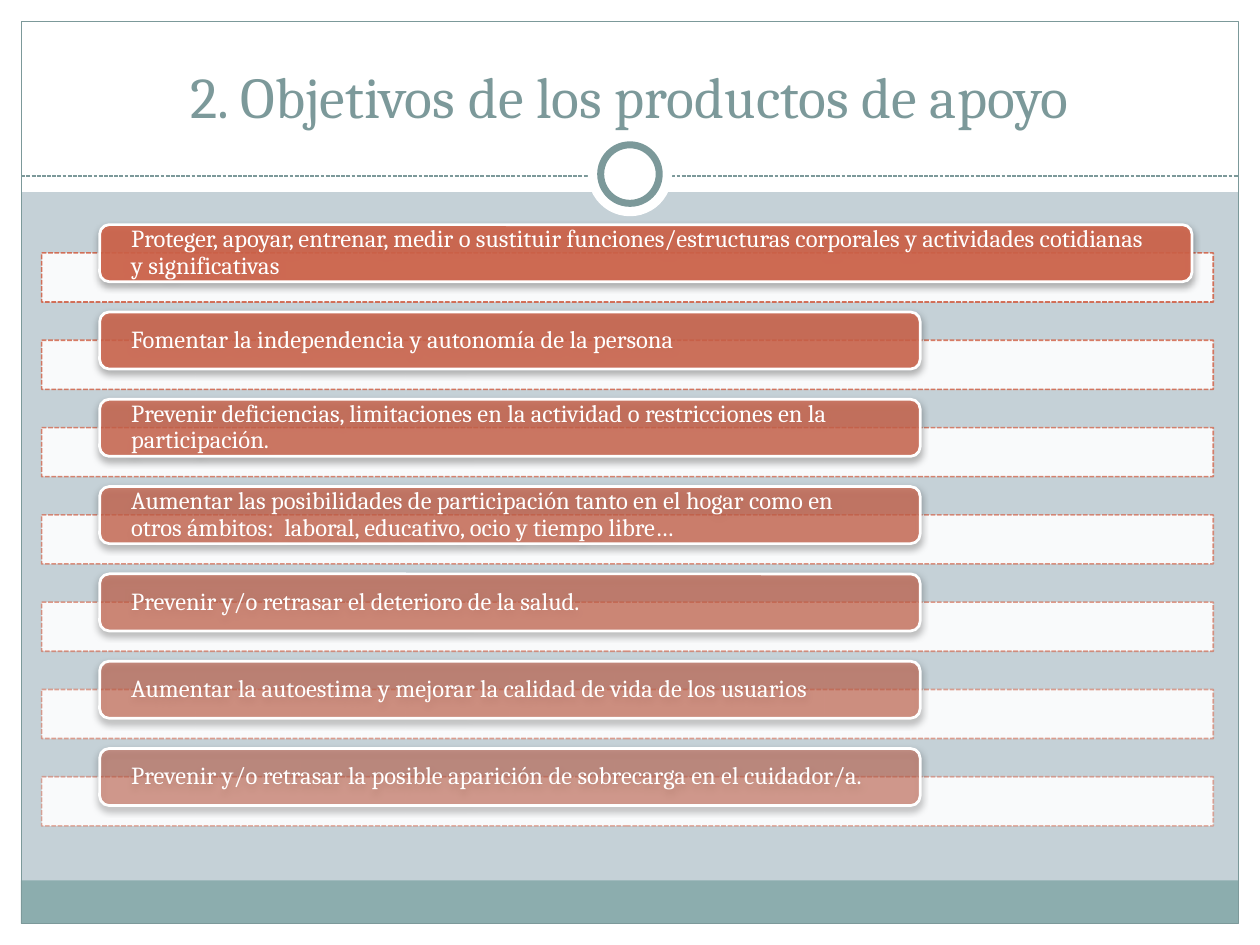
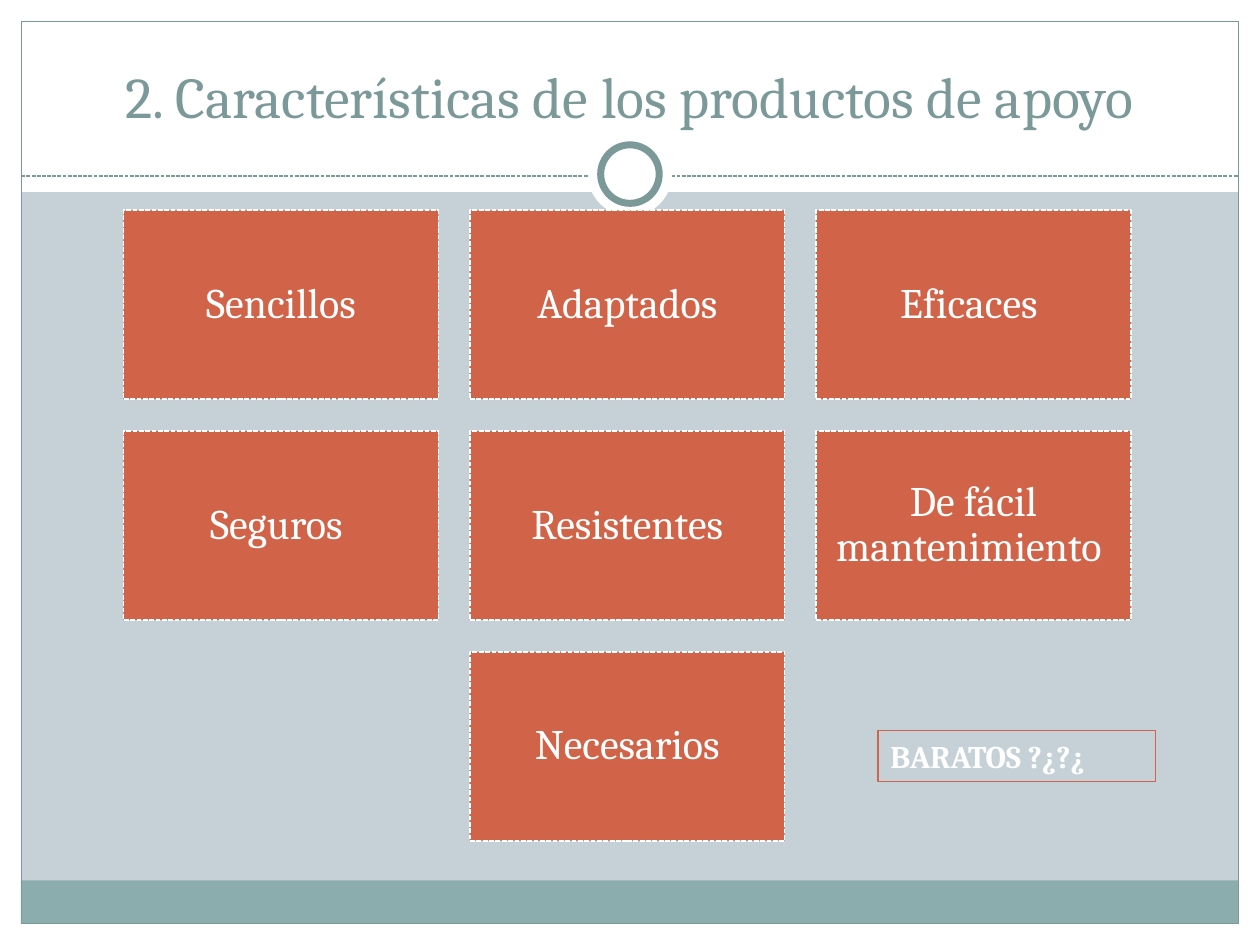
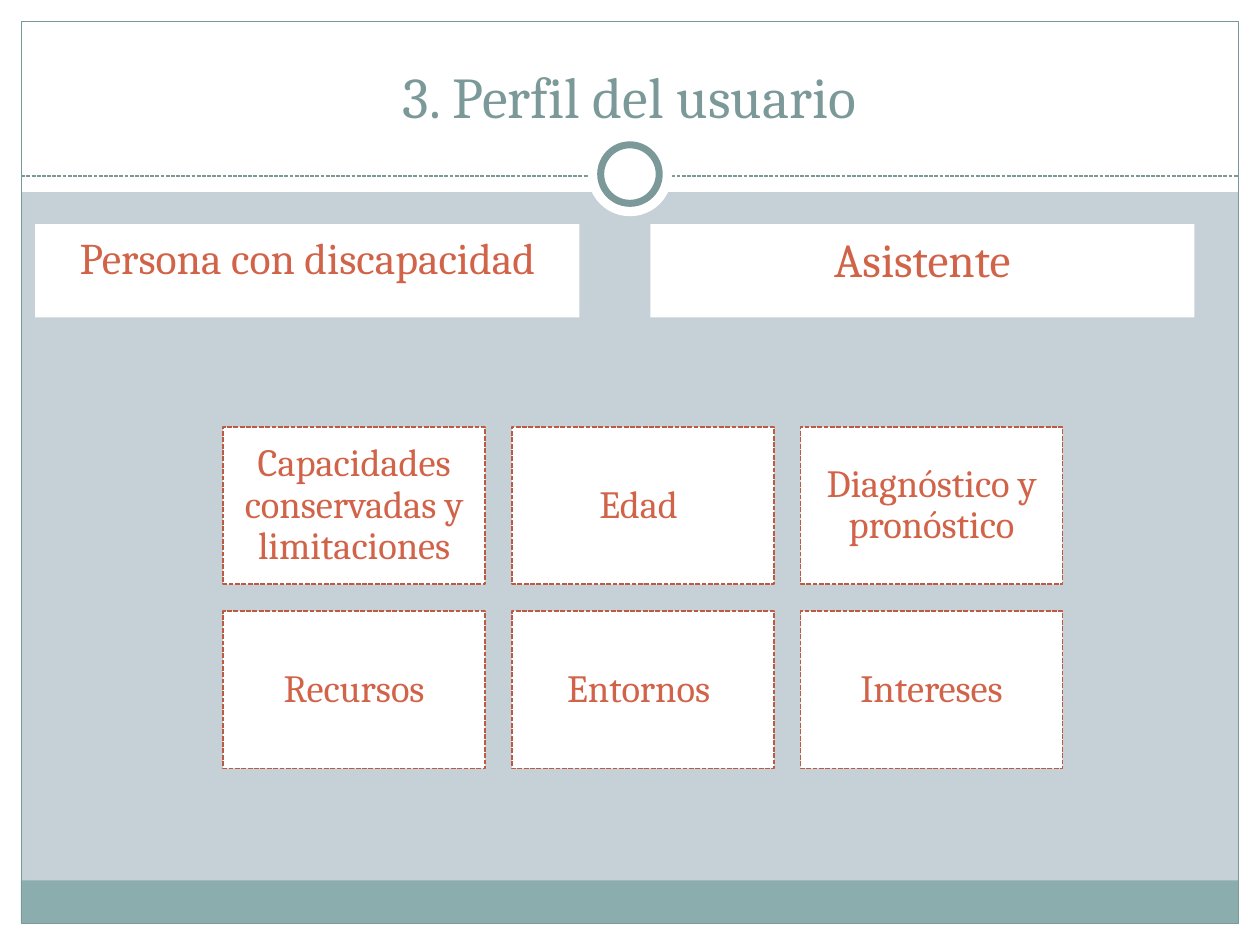
import pptx
import pptx.dml.color
import pptx.enum.dml
import pptx.enum.shapes
import pptx.enum.text
import pptx.oxml
import pptx.oxml.ns
import pptx.util

FONT = "Cambria"
WHITE = pptx.dml.color.RGBColor(0xFF, 0xFF, 0xFF)
BACKGROUND = pptx.dml.color.RGBColor(0xC5, 0xD1, 0xD7)
TEAL = pptx.dml.color.RGBColor(0x7C, 0x99, 0x9A)
FOOTER_TEAL = pptx.dml.color.RGBColor(0x8C, 0xAD, 0xAE)
TERRACOTTA = pptx.dml.color.RGBColor(0xD1, 0x63, 0x49)
DARK_TERRACOTTA = pptx.dml.color.RGBColor(0xBE, 0x5A, 0x42)

RECTANGLE = pptx.enum.shapes.MSO_SHAPE.RECTANGLE
ROUNDED = pptx.enum.shapes.MSO_SHAPE.ROUNDED_RECTANGLE
OVAL = pptx.enum.shapes.MSO_SHAPE.OVAL
DASHED = pptx.enum.dml.MSO_LINE.SQUARE_DOT
LEFT = pptx.enum.text.PP_ALIGN.LEFT
CENTER = pptx.enum.text.PP_ALIGN.CENTER
TOP = pptx.enum.text.MSO_ANCHOR.TOP
MIDDLE = pptx.enum.text.MSO_ANCHOR.MIDDLE
BOTTOM = pptx.enum.text.MSO_ANCHOR.BOTTOM
NAMESPACE = pptx.oxml.ns.nsdecls("a")


def draw_shape(page, preset, place, fill=None, line=None, weight=0.75,
               dash=None, fill_alpha=100, line_alpha=100):
    """Place is left, top, width, height in centimetres; alphas are percentages."""
    shape = page.shapes.add_shape(preset, *[pptx.util.Cm(length) for length in place])
    shape.shadow.inherit = False
    if fill is None:
        shape.fill.background()
    else:
        shape.fill.solid()
        shape.fill.fore_color.rgb = fill
    if line is None:
        shape.line.fill.background()
    else:
        shape.line.color.rgb = line
        shape.line.width = pptx.util.Pt(weight)
        if dash:
            shape.line.dash_style = dash
    for route, alpha in (("a:solidFill/a:srgbClr", fill_alpha),
                         ("a:ln/a:solidFill/a:srgbClr", line_alpha)):
        if alpha < 100:
            color = shape.element.spPr.xpath(route)[0]
            color.append(pptx.oxml.parse_xml(f'<a:alpha {NAMESPACE} val="{alpha * 1000}"/>'))
    return shape


def write(shape, text, size, color, align=CENTER, anchor=MIDDLE,
          margins=(0.25, 0.13), spacing=None, bold=False):
    frame = shape.text_frame
    frame.word_wrap = True
    frame.auto_size = pptx.enum.text.MSO_AUTO_SIZE.NONE
    frame.vertical_anchor = anchor
    frame.margin_left = frame.margin_right = pptx.util.Cm(margins[0])
    frame.margin_top = frame.margin_bottom = pptx.util.Cm(margins[1])
    frame.text = text
    para = frame.paragraphs[0]
    para.alignment = align
    para.line_spacing = spacing
    para.font.name = FONT
    para.font.size = pptx.util.Pt(size)
    para.font.bold = bold
    para.font.color.rgb = color


deck = pptx.Presentation()
deck.slide_width, deck.slide_height = pptx.util.Cm(25.4), pptx.util.Cm(19.05)
layout = deck.slide_layouts[5]
layout.background.fill.solid()
layout.background.fill.fore_color.rgb = BACKGROUND
for placeholder in list(layout.placeholders):
    if placeholder.placeholder_format.idx != 0:
        layout.shapes.element.remove(placeholder.element)

# Pages and titles
titles = [
    "2. Objetivos de los productos de apoyo",
    "2. Características de los productos de apoyo",
    "3. Perfil del usuario",
]
pages = []
for text in titles:
    page = deck.slides.add_slide(layout)
    title = page.shapes.title
    title.left, title.top = pptx.util.Cm(0.84), pptx.util.Cm(0.64)
    title.width, title.height = pptx.util.Cm(23.7), pptx.util.Cm(2.11)
    write(title, text, 33, TEAL, anchor=BOTTOM)
    pages.append(page)
goals_page, traits_page, profile_page = pages

# Frame shared by all pages: drawn once, then moved to the layout
frame_parts = [
    draw_shape(goals_page, RECTANGLE, place, fill)
    for place, fill in (
        ((0, 18.62, 25.4, 0.43), WHITE),
        ((0, 0, 25.4, 3.87), WHITE),
        ((0, 0, 0.43, 19.05), WHITE),
        ((24.97, 0, 0.43, 19.05), WHITE),
        ((0.42, 17.75, 24.54, 0.87), FOOTER_TEAL),
    )
]
frame_parts.append(draw_shape(goals_page, RECTANGLE, (0.43, 0.43, 24.54, 18.19), line=TEAL))
divider = goals_page.shapes.add_connector(
    pptx.enum.shapes.MSO_CONNECTOR.STRAIGHT,
    pptx.util.Cm(0.43), pptx.util.Cm(3.55), pptx.util.Cm(24.97), pptx.util.Cm(3.55))
divider.line.color.rgb = TEAL
divider.line.width = pptx.util.Pt(0.75)
divider.line.dash_style = DASHED
divider.element.spPr.append(pptx.oxml.parse_xml(f"<a:effectLst {NAMESPACE}/>"))
frame_parts.append(divider)
frame_parts.append(draw_shape(goals_page, OVAL, (11.85, 2.66, 1.7, 1.7), WHITE))
frame_parts.append(draw_shape(goals_page, OVAL, (12.11, 2.92, 1.18, 1.18), WHITE, TEAL, 4))
for part in frame_parts:
    layout.shapes.element.append(part.element)

# Goals: each label overlaps its dashed bar and fades down the list
goals = [
    "Proteger, apoyar, entrenar, medir o sustituir funciones/estructuras corporales "
    "y actividades cotidianas y significativas",
    "Fomentar la independencia y autonomía de la persona",
    "Prevenir deficiencias, limitaciones en la actividad o restricciones en la participación.",
    "Aumentar las posibilidades de participación tanto en el hogar como en otros ámbitos:  "
    "laboral, educativo, ocio y tiempo libre…",
    "Prevenir y/o retrasar el deterioro de la salud.",
    "Aumentar la autoestima y mejorar la calidad de vida de los usuarios",
    "Prevenir y/o retrasar la posible aparición de sobrecarga en el cuidador/a.",
]
for index, goal in enumerate(goals):
    offset = 1.76 * index
    alpha = round(90 - 40 * index / (len(goals) - 1))
    draw_shape(goals_page, RECTANGLE, (0.84, 5.1 + offset, 23.62, 0.99), WHITE, TERRACOTTA,
               0.9, DASHED, fill_alpha=90, line_alpha=alpha)
    label_width = 22.02 if index == 0 else 16.54
    label = draw_shape(goals_page, ROUNDED, (2.01, 4.53 + offset, label_width, 1.15),
                       TERRACOTTA, WHITE, 1.57, fill_alpha=alpha)
    effects = label.element.spPr.find(pptx.oxml.ns.qn("a:effectLst"))
    effects.append(pptx.oxml.parse_xml(
        f'<a:outerShdw {NAMESPACE} blurRad="50800" dist="25400" dir="5400000" rotWithShape="0">'
        '<a:srgbClr val="000000"><a:alpha val="35000"/></a:srgbClr></a:outerShdw>'))
    write(label, goal, 14, WHITE, LEFT, margins=(0.58, 0), spacing=0.9)

# Card grids: left, top, width, height, column step, row step; short rows are centred
traits = [
    ["Sencillos", "Adaptados", "Eficaces "],
    ["Seguros ", "Resistentes", "De fácil mantenimiento "],
    ["Necesarios"],
]
user_factors = [
    ["Capacidades conservadas y limitaciones", "Edad ", "Diagnóstico y pronóstico"],
    ["Recursos", "Entornos ", "Intereses"],
]
grids = [
    (traits_page, traits, (2.49, 4.24, 6.35, 3.81, 6.98, 4.45),
     TERRACOTTA, WHITE, WHITE, 24, 0.25),
    (profile_page, user_factors, (4.5, 8.61, 5.28, 3.17, 5.82, 3.71),
     WHITE, DARK_TERRACOTTA, TERRACOTTA, 22, 0.23),
]
for page, rows, geometry, fill, line, color, size, margin in grids:
    left, top, width, height, column_step, row_step = geometry
    for row, names in enumerate(rows):
        first_column = (3 - len(names)) // 2
        for column, name in enumerate(names, start=first_column):
            place = (left + column * column_step, top + row * row_step, width, height)
            card = draw_shape(page, RECTANGLE, place, fill, line, 0.9, DASHED)
            write(card, name, size, color, margins=(margin, margin), spacing=0.9)

cheap_box = draw_shape(traits_page, RECTANGLE, (17.7, 14.73, 5.59, 1.02), line=TERRACOTTA)
write(cheap_box, "BARATOS ?¿?¿", 18, WHITE, LEFT, TOP, bold=True)

# Profile headings
for left, heading, size in ((0.71, "Persona con discapacidad", 25), (13.11, "Asistente", 27)):
    box = draw_shape(profile_page, RECTANGLE, (left, 4.52, 10.97, 1.88), WHITE)
    write(box, heading, size, TERRACOTTA, anchor=TOP)

deck.save("out.pptx")
